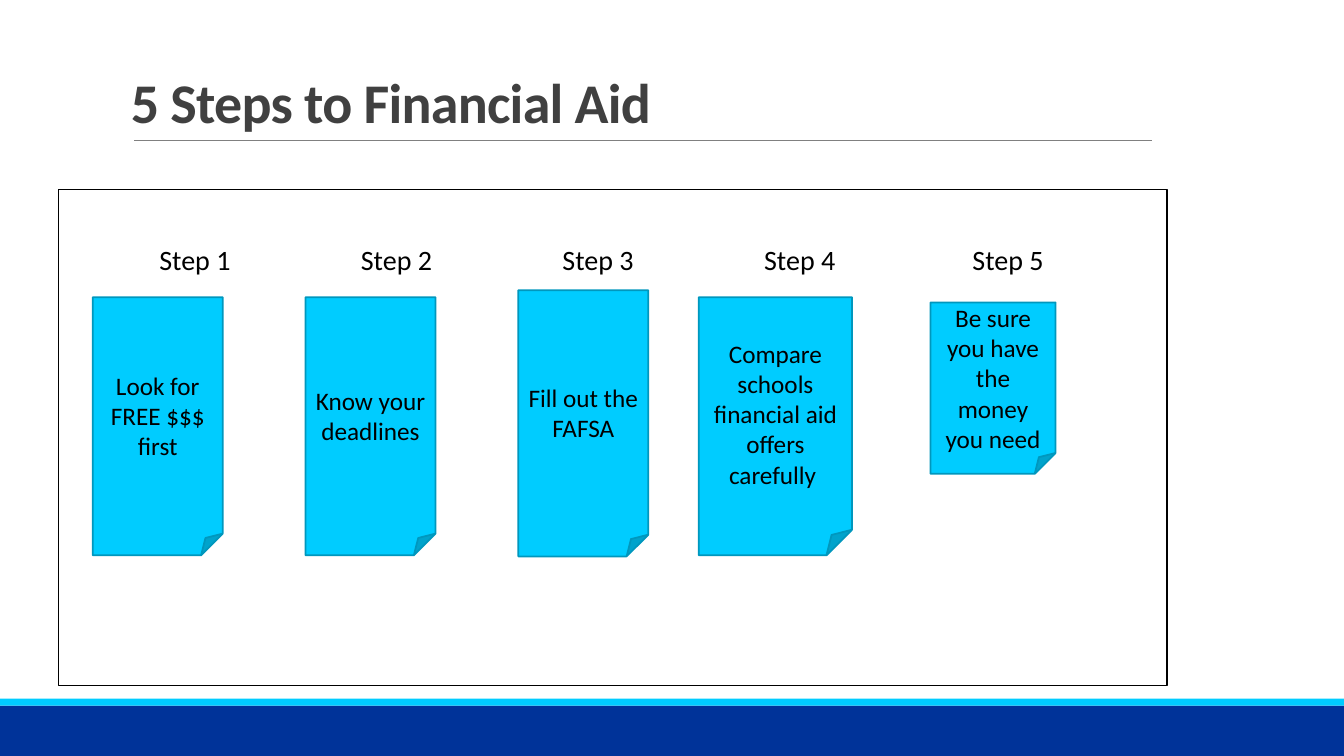
"""Build the slide '5 Steps to Financial Aid'."""
from dataclasses import dataclass

from lxml import etree
from pptx import Presentation
from pptx.dml.color import RGBColor
from pptx.enum.shapes import MSO_CONNECTOR, MSO_SHAPE
from pptx.enum.text import MSO_ANCHOR, PP_ALIGN
from pptx.oxml.ns import qn
from pptx.util import Inches, Pt

RECTANGLE, NOTE = MSO_SHAPE.RECTANGLE, MSO_SHAPE.FOLDED_CORNER
STRAIGHT = MSO_CONNECTOR.STRAIGHT
TOP, MIDDLE, BOTTOM = MSO_ANCHOR.TOP, MSO_ANCHOR.MIDDLE, MSO_ANCHOR.BOTTOM
LEFT, CENTER = PP_ALIGN.LEFT, PP_ALIGN.CENTER
WIDTH, HEIGHT = Inches(13.33), Inches(7.5)


@dataclass(frozen=True)
class Theme:
    font: str = "Calibri"
    title_size: float = 40
    label_size: float = 20
    note_size: float = 18
    outline: float = 1.25
    hairline: float = 0.5
    title: str = "404040"
    text: str = "000000"
    paper: str = "FFFFFF"
    rule: str = "808080"
    navy: str = "003399"
    cyan: str = "00CCFF"
    note_edge: str = "0097BD"


@dataclass(frozen=True)
class Area:
    """Place and size in percent of the slide."""
    left: float
    top: float
    width: float
    height: float


@dataclass(frozen=True)
class Step:
    label_at: float
    area: Area
    lines: tuple[str, ...]


THEME = Theme()
NOTE_LEFT, NOTE_PITCH, NOTE_WIDTH = 6.9, 15.83, 9.68
NOTE_TOP, NOTE_HEIGHT = 39.33, 34.13
LABEL_LEFT, LABEL_PITCH = 7.5, 15
FRAME = Area(4.35, 25.07, 82.5, 65.6)
BANDS = ((Area(0, 93.33, 100, 6.67), THEME.navy),
         (Area(0, 92.4, 100, 0.93), THEME.cyan))
STEPS = (
    Step(LABEL_LEFT, Area(NOTE_LEFT, NOTE_TOP, NOTE_WIDTH, NOTE_HEIGHT),
         ("Look for FREE $$$ first",)),
    Step(LABEL_LEFT + LABEL_PITCH,
         Area(NOTE_LEFT + NOTE_PITCH, NOTE_TOP, NOTE_WIDTH, NOTE_HEIGHT),
         ("Know your deadlines",)),
    Step(LABEL_LEFT + 2 * LABEL_PITCH,
         Area(NOTE_LEFT + 2 * NOTE_PITCH, 38.4, NOTE_WIDTH, 35.2),
         ("Fill out the", "FAFSA")),
    Step(LABEL_LEFT + 3 * LABEL_PITCH, Area(52, NOTE_TOP, 11.4, NOTE_HEIGHT),
         ("Compare schools financial aid offers carefully ",)),
    Step(68, Area(69.24, 40, 9.3, 22.67),
         ("Be sure you have the money you need",)),
)


def across(percent: float) -> int:
    return round(WIDTH * percent / 100)


def down(percent: float) -> int:
    return round(HEIGHT * percent / 100)


def place(area: Area) -> tuple[int, int, int, int]:
    return across(area.left), down(area.top), across(area.width), down(area.height)


def color(value: str) -> RGBColor:
    return RGBColor.from_string(value)


def add_box(page, kind, area: Area, fill: str, edge: str | None = None):
    box = page.shapes.add_shape(kind, *place(area))
    box.shadow.inherit = False
    box.fill.solid()
    box.fill.fore_color.rgb = color(fill)
    if edge:
        box.line.color.rgb = color(edge)
        box.line.width = Pt(THEME.outline)
    else:
        box.line.fill.background()
    return box


def style(para, size: float, ink: str, align=LEFT, bold: bool = False) -> None:
    para.alignment = align
    para.font.name = THEME.font
    para.font.size = Pt(size)
    para.font.bold = bold
    para.font.color.rgb = color(ink)


def add_title(page, text: str) -> None:
    frame = page.shapes.add_textbox(*place(Area(9, 4.13, 76.75, 14.4))).text_frame
    frame.word_wrap = True
    frame.vertical_anchor = BOTTOM
    para = frame.paragraphs[0]
    para.text = text
    para.line_spacing = 0.85
    style(para, THEME.title_size, THEME.title, bold=True)
    para.runs[0].font._element.set("spc", "-50")


def add_rule(page) -> None:
    level = down(18.53)
    rule = page.shapes.add_connector(STRAIGHT, across(10), level, across(85.75), level)
    rule.line.color.rgb = color(THEME.rule)
    rule.line.width = Pt(THEME.hairline)
    etree.SubElement(rule._element.spPr, qn("a:effectLst"))


def add_labels(page) -> None:
    frame = add_box(page, RECTANGLE, FRAME, THEME.paper, THEME.text).text_frame
    frame.word_wrap = True
    frame.vertical_anchor = TOP
    frame.margin_left = frame.margin_right = 0
    frame.margin_top = down(7.5)
    para = frame.paragraphs[0]
    para.text = "".join(f"\tStep {number}" for number, _ in enumerate(STEPS, 1))
    para.line_spacing = 0.9
    tabs = etree.SubElement(para._p.get_or_add_pPr(), qn("a:tabLst"))
    for step in STEPS:
        etree.SubElement(tabs, qn("a:tab"), pos=str(across(step.label_at)), algn="l")
    style(para, THEME.label_size, THEME.text)


def add_note(page, step: Step) -> None:
    frame = add_box(page, NOTE, step.area, THEME.cyan, THEME.note_edge).text_frame
    frame.word_wrap = True
    frame.vertical_anchor = MIDDLE
    frame.text = "\n".join(step.lines)
    for para in frame.paragraphs:
        style(para, THEME.note_size, THEME.text, CENTER)


def main() -> None:
    deck = Presentation()
    deck.slide_width, deck.slide_height = WIDTH, HEIGHT
    page = deck.slides.add_slide(deck.slide_layouts[6])
    for area, fill in BANDS:
        add_box(page, RECTANGLE, area, fill)
    add_rule(page)
    add_title(page, "5 Steps to Financial Aid")
    add_labels(page)
    for step in STEPS:
        add_note(page, step)
    deck.save("out.pptx")


if __name__ == "__main__":
    main()
